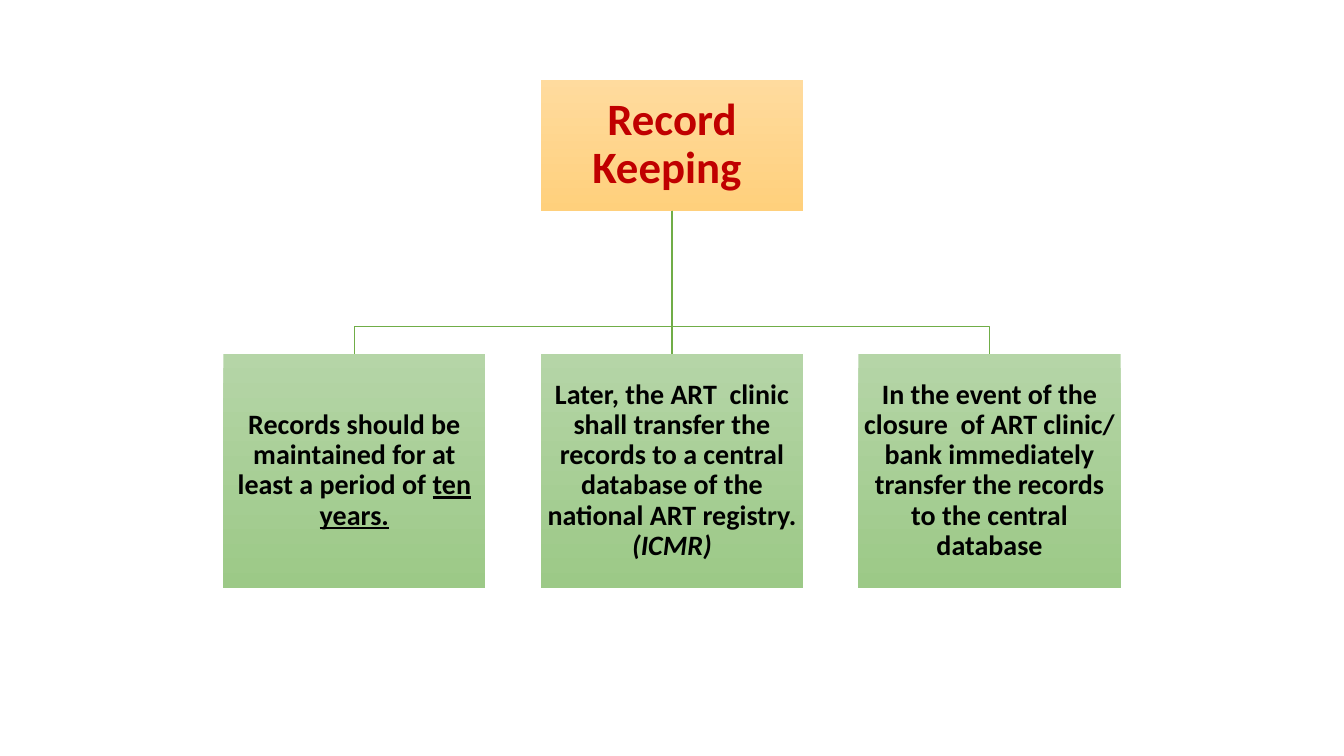
from lxml import etree
from pptx import Presentation
from pptx import util as u
from pptx.dml.color import RGBColor
from pptx.enum import shapes, text
from pptx.oxml import ns

WIDTH, HEIGHT = u.Inches(13.33), u.Inches(7.5)
BOX_WIDTH, COLUMN_PITCH = u.Inches(2.6), u.Inches(3.15)
TITLE_TOP, TITLE_HEIGHT = u.Inches(0.79), u.Inches(1.3)
RULE_TOP, RULE_HEIGHT = u.Inches(3.51), u.Inches(2.32)
BRANCH_Y = u.Inches(3.24)

RED = RGBColor(0xC0, 0x00, 0x00)
BLACK = RGBColor(0x00, 0x00, 0x00)
LINE_GREEN = RGBColor(0x70, 0xAD, 0x47)
ORANGES = RGBColor(0xFF, 0xDB, 0x9E), RGBColor(0xFF, 0xD0, 0x7C)
GREENS = RGBColor(0xB5, 0xD5, 0xA7), RGBColor(0x9C, 0xC9, 0x87)

# Each rule is a list of (words, emphasis) spans.
RULES = [
    [("Records should be maintained for at least a period of ", None),
     ("ten years.", "underline")],
    [("Later, the ART  clinic shall transfer the records to a central "
      "database of the national ART registry. ", None),
     ("(ICMR)", "italic")],
    [("In the event of the closure  of ART clinic/ bank immediately "
      "transfer the records to the central database", None)],
]


def column_left(column):
    """Left edge of a box; column 1 is centred on the slide."""
    return (WIDTH - BOX_WIDTH) // 2 + (column - 1) * COLUMN_PITCH


def fill_downwards(box, colours):
    box.fill.gradient()
    box.fill.gradient_angle = 270
    for stop, colour in zip(box.fill.gradient_stops, colours):
        stop.color.rgb = colour


def write(box, spans, size, colour, inset):
    frame = box.text_frame
    frame.word_wrap = True
    frame.auto_size = text.MSO_AUTO_SIZE.NONE
    frame.vertical_anchor = text.MSO_ANCHOR.MIDDLE
    frame.margin_left = frame.margin_right = u.Inches(inset)
    frame.margin_top = frame.margin_bottom = u.Inches(inset)
    para = frame.paragraphs[0]
    para.alignment = text.PP_ALIGN.CENTER
    para.line_spacing = 0.9
    para.font.name, para.font.size = "Calibri", u.Pt(size)
    para.font.bold = True
    para.font.color.rgb = colour
    for words, emphasis in spans:
        span = para.add_run()
        span.text = words
        if emphasis:
            setattr(span.font, emphasis, True)


def place_title(page):
    box = page.shapes.title
    box.left, box.top = column_left(1), TITLE_TOP
    box.width, box.height = BOX_WIDTH, TITLE_HEIGHT
    fill_downwards(box, ORANGES)
    write(box, [("Record Keeping ", None)], 32, RED, 0.02)
    return box


def add_rule(page, column, spans):
    box = page.shapes.add_shape(shapes.MSO_SHAPE.RECTANGLE, column_left(column),
                                RULE_TOP, BOX_WIDTH, RULE_HEIGHT)
    box.shadow.inherit = False
    box.line.fill.background()
    fill_downwards(box, GREENS)
    write(box, spans, 20, BLACK, 0.01)
    return box


def style_line(shape):
    shape.line.color.rgb = LINE_GREEN
    shape.line.width = u.Pt(1)


def add_trunk(page, parent, child):
    trunk = page.shapes.add_connector(shapes.MSO_CONNECTOR.STRAIGHT, 0, 0, 0, 0)
    trunk.begin_connect(parent, 2)
    trunk.end_connect(child, 0)
    style_line(trunk)
    etree.SubElement(trunk.element.spPr, ns.qn("a:effectLst"))


def add_branch(page, parent, child):
    """Stepped line from the parent's foot to the child's head."""
    start_x = parent.left + parent.width // 2
    end_x = child.left + child.width // 2
    builder = page.shapes.build_freeform(start_x, parent.top + parent.height)
    builder.add_line_segments([(start_x, BRANCH_Y), (end_x, BRANCH_Y),
                               (end_x, child.top)], close=False)
    branch = builder.convert_to_shape()
    branch.shadow.inherit = False
    branch.fill.background()
    style_line(branch)


def main():
    deck = Presentation()
    deck.slide_width, deck.slide_height = WIDTH, HEIGHT
    page = deck.slides.add_slide(deck.slide_layouts.get_by_name("Title Only"))
    title = place_title(page)
    left, middle, right = [add_rule(page, column, spans)
                           for column, spans in enumerate(RULES)]
    add_branch(page, title, left)
    add_trunk(page, title, middle)
    add_branch(page, title, right)
    deck.save("out.pptx")


if __name__ == "__main__":
    main()
